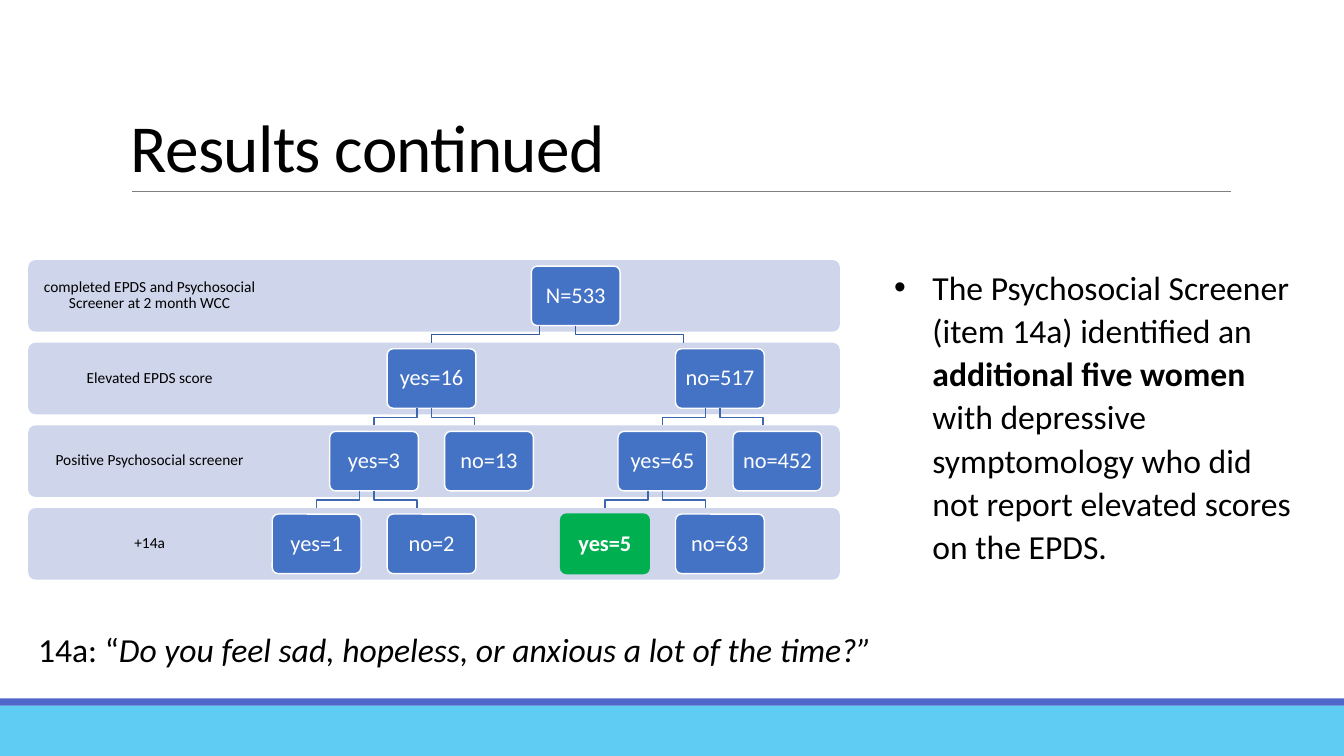
from lxml.etree import SubElement
from pptx import Presentation
from pptx.dml.color import RGBColor
from pptx.enum.shapes import MSO_CONNECTOR, MSO_SHAPE
from pptx.enum.text import MSO_ANCHOR, PP_ALIGN
from pptx.oxml.ns import qn
from pptx.util import Inches, Pt

BLACK = RGBColor(0x00, 0x00, 0x00)
WHITE = RGBColor(0xFF, 0xFF, 0xFF)
GREY = RGBColor(0x80, 0x80, 0x80)
SKY = RGBColor(0x5E, 0xCC, 0xF3)
INDIGO = RGBColor(0x4E, 0x67, 0xC8)
BAND = RGBColor(0xCF, 0xD5, 0xEA)
NODE = RGBColor(0x44, 0x72, 0xC4)
GREEN = RGBColor(0x00, 0xB0, 0x50)
BRANCH_COLORS = [RGBColor(0x36, 0x5B, 0x9D)] + [RGBColor(0x3E, 0x67, 0xB2)] * 2

CENTERED = {"alignment": PP_ALIGN.CENTER, "line_spacing": 0.9}

ROW_PITCH = 0.82
BAND_TOP = 2.58
NODE_TOP, NODE_W, NODE_H = 2.64, 0.88, 0.59
SPREADS = [1.43, 0.57, 0.57]  # distance from parent to child centre, by level

ROW_LABELS = [
    "completed EPDS and Psychosocial Screener at 2 month WCC",
    "Elevated EPDS score",
    "Positive Psychosocial screener",
    "+14a",
]
HIGHLIGHT = "yes=5"
TREE = ("N=533", [
    ("yes=16", [
        ("yes=3", [("yes=1", []), ("no=2", [])]),
        ("no=13", []),
    ]),
    ("no=517", [
        ("yes=65", [(HIGHLIGHT, []), ("no=63", [])]),
        ("no=452", []),
    ]),
])


def apply(target, values):
    for name, value in values.items():
        setattr(target, name, value)


class SlideBuilder:
    def __init__(self, s, font="Calibri"):
        self.s = s
        self.font = font

    def fill_text(self, tf, runs, size, color=BLACK, para=None, inset=None, **frame):
        """Fill a text frame with one paragraph of (text, font values) runs."""
        apply(tf, {"word_wrap": True, **frame})
        if inset is not None:
            for side in ("left", "top", "right", "bottom"):
                setattr(tf, f"margin_{side}", Inches(inset))
        p = tf.paragraphs[0]
        apply(p, para or {})
        for text, values in runs:
            r = p.add_run()
            r.text = text
            apply(r.font, {"name": self.font, "size": Pt(size), **values})
            r.font.color.rgb = color
        return p

    def text(self, box, runs, size, **options):
        tf = self.s.shapes.add_textbox(*map(Inches, box)).text_frame
        return self.fill_text(tf, runs, size, **options)

    def block(self, box, fill, line=None, kind=MSO_SHAPE.RECTANGLE):
        sp = self.s.shapes.add_shape(kind, *map(Inches, box))
        sp.shadow.inherit = False
        sp.fill.solid()
        sp.fill.fore_color.rgb = fill
        if line is None:
            sp.line.fill.background()
        else:
            sp.line.color.rgb = line
            sp.line.width = Pt(1)
        if kind == MSO_SHAPE.ROUNDED_RECTANGLE:
            sp.adjustments[0] = 0.1
        return sp

    def rule(self, x1, y1, x2, y2, color):
        line = self.s.shapes.add_connector(
            MSO_CONNECTOR.STRAIGHT, *map(Inches, (x1, y1, x2, y2)))
        line.line.color.rgb = color
        line.line.width = Pt(0.5)
        SubElement(line._element.spPr, qn("a:effectLst"))

    def band(self, row, label):
        top = BAND_TOP + row * ROW_PITCH
        self.block((0.28, top, 8.05, 0.71), BAND, kind=MSO_SHAPE.ROUNDED_RECTANGLE)
        self.text((0.3, top + 0.02, 2.37, 0.66), [(label, {})], 11, para=CENTERED,
                  inset=0.09, vertical_anchor=MSO_ANCHOR.MIDDLE)

    def branch(self, parent_x, child_x, top, color):
        """Draw an elbow covering three quarters of the way to the child."""
        left = min(parent_x, child_x)
        right = left + 0.75 * abs(child_x - parent_x)
        start, end = (right, left) if child_x < parent_x else (left, right)
        points = [(start, top), (start, top + 0.09), (end, top + 0.09), (end, top + 0.17)]
        points = [(Inches(x), Inches(y)) for x, y in points]
        builder = self.s.shapes.build_freeform(*points[0])
        builder.add_line_segments(points[1:], close=False)
        sp = builder.convert_to_shape()
        sp.shadow.inherit = False
        sp.fill.background()
        sp.line.color.rgb = color
        sp.line.width = Pt(1)

    def node(self, tree, center, level=0):
        """Draw a node, then its branches and children."""
        label, children = tree
        top = NODE_TOP + level * ROW_PITCH
        marked = label == HIGHLIGHT
        fill, line = (GREEN, GREEN) if marked else (NODE, WHITE)
        sp = self.block((center - NODE_W / 2, top, NODE_W, NODE_H), fill, line,
                        MSO_SHAPE.ROUNDED_RECTANGLE)
        self.fill_text(sp.text_frame, [(label, {"bold": marked})], 16, WHITE, CENTERED,
                       inset=0.07, vertical_anchor=MSO_ANCHOR.MIDDLE)
        for side, child in zip((-1, 1), children):
            child_x = center + side * SPREADS[level]
            self.branch(center, child_x, top + NODE_H, BRANCH_COLORS[level])
            self.node(child, child_x, level + 1)

    def bullet(self, p, indent):
        pPr = p._p.get_or_add_pPr()
        pPr.set("marL", str(Inches(indent)))
        pPr.set("indent", str(-Inches(indent)))
        SubElement(pPr, qn("a:buFont")).set("typeface", "Arial")
        SubElement(pPr, qn("a:buChar")).set("char", "•")


def main():
    prs = Presentation()
    prs.slide_width, prs.slide_height = Inches(13.33), Inches(7.5)
    slide = SlideBuilder(prs.slides.add_slide(prs.slide_layouts[6]))

    slide.block((0, 7, 13.33, 0.5), SKY)
    slide.block((0, 6.93, 13.33, 0.07), INDIGO)
    slide.rule(1.31, 1.9, 12.21, 1.9, GREY)
    title = slide.text((1.2, 0.31, 11, 1.59), [("Results continued", {})], 48,
                       para={"line_spacing": 0.85}, vertical_anchor=MSO_ANCHOR.BOTTOM)
    title.runs[0].font._element.set("spc", "-50")

    for row, label in enumerate(ROW_LABELS):
        slide.band(row, label)
    slide.node(TREE, 5.71)

    finding = slide.text((8.77, 2.57, 4.27, 3.11), [
        ("The Psychosocial Screener (item 14a) identified an ", {}),
        ("additional five women ", {"bold": True}),
        ("with depressive symptomology who did not report elevated scores on the EPDS.", {}),
    ], 24, para={"line_spacing": 1.07, "space_after": Pt(8)})
    slide.bullet(finding, 0.38)

    slide.text((0.28, 6.19, 8.56, 0.5), [
        ("14a: “", {}),
        ("Do you feel sad, hopeless, or anxious a lot of the time?”", {"italic": True}),
    ], 24, word_wrap=False)

    prs.save("out.pptx")


if __name__ == "__main__":
    main()
